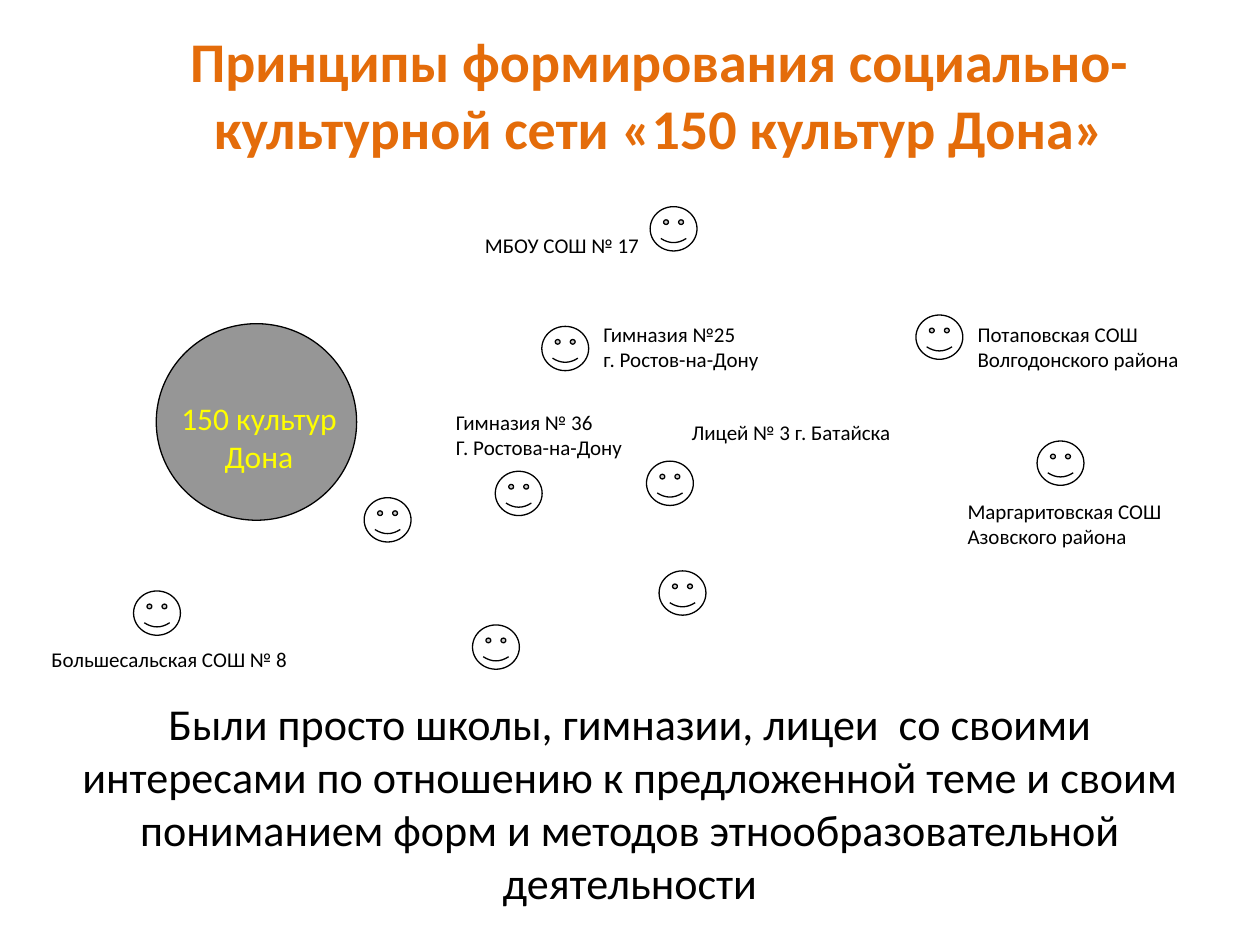
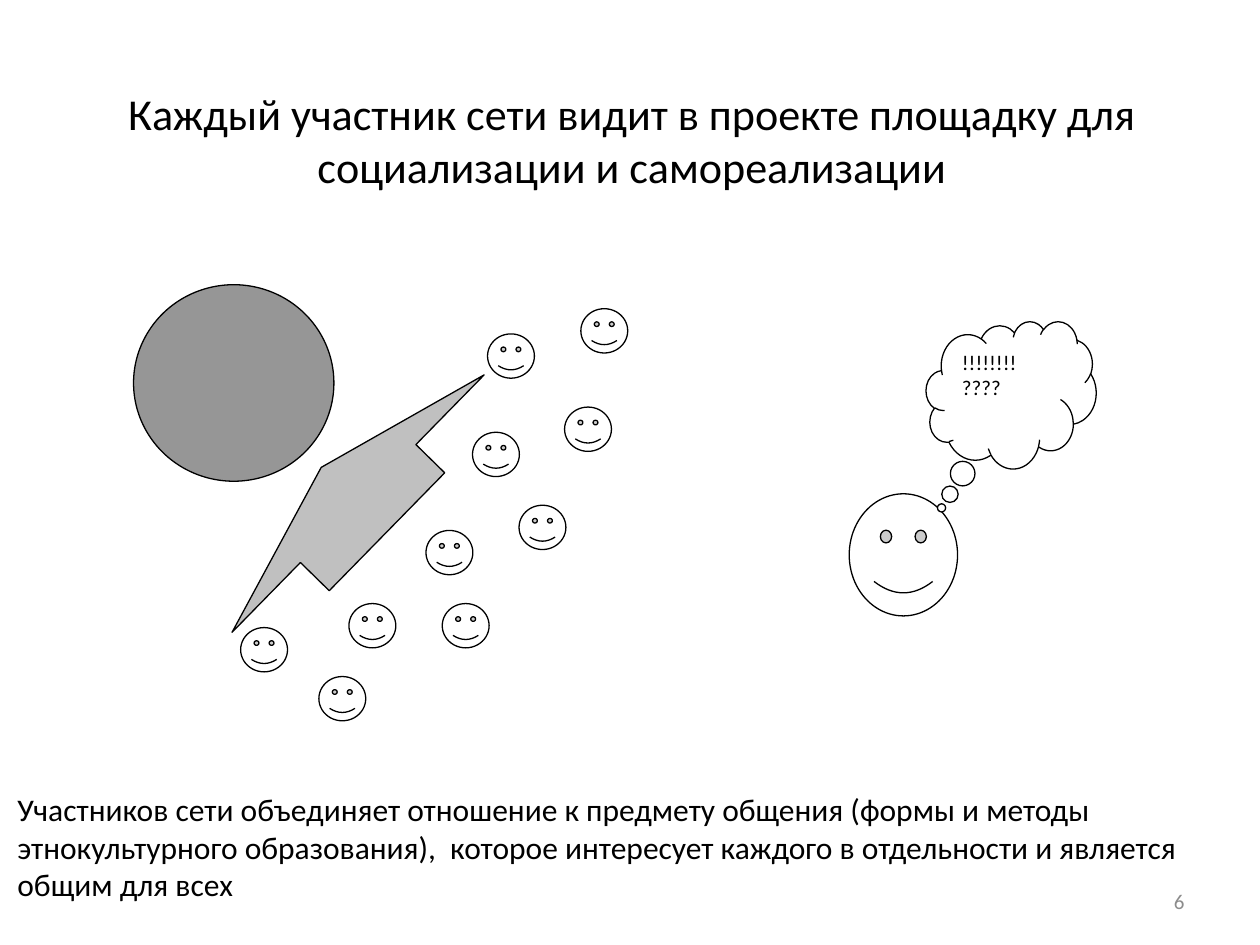
"""Build two slides about the «150 культур Дона» school network."""
from dataclasses import dataclass

from pptx import Presentation, util as u
from pptx.dml.color import RGBColor
from pptx.enum import shapes, text

Pt = u.Pt
Kind = shapes.MSO_SHAPE
Align = text.PP_ALIGN
Anchor = text.MSO_ANCHOR

FONT = "Calibri"
BLACK, WHITE, ORANGE, YELLOW = "000000", "FFFFFF", "E46C0A", "FFFF00"
HUB_GRAY, ARROW_GRAY, NUMBER_GRAY = "969696", "C0C0C0", "8C8C8C"
FACE_SIZE = (26.8, 25.3)
HUB_SIZE = (114.5, 112.3)
SMILE = (0.047,)
TITLE_SIZE = 25.2


@dataclass(frozen=True)
class Label:
    """Text box with its place in points and its style."""

    lines: tuple[str, ...]
    left: float
    top: float
    width: float
    height: float
    size: float = 12
    color: str = BLACK
    bold: bool = False
    align: Align = Align.LEFT
    anchor: Anchor = Anchor.TOP
    wrap: bool = False


@dataclass(frozen=True)
class Figure:
    """Outlined preset shape with its place in points."""

    kind: Kind
    left: float
    top: float
    width: float
    height: float
    fill: str = WHITE
    adjustments: tuple[float, ...] = ()
    rotation: float = 0
    lines: tuple[str, ...] = ()


def rgb(value: str) -> RGBColor:
    """Turn a hex string into a colour."""
    return RGBColor.from_string(value)


def write(frame, lines: tuple[str, ...], size: float, color: str,
          bold: bool = False, align: Align = Align.LEFT) -> None:
    """Fill a text frame with one paragraph for each line."""
    for index, line in enumerate(lines):
        paragraph = frame.add_paragraph() if index else frame.paragraphs[0]
        paragraph.alignment = align
        run = paragraph.add_run()
        run.text = line
        run.font.name = FONT
        run.font.size = Pt(size)
        run.font.bold = bold
        run.font.color.rgb = rgb(color)


def add_label(slide, label: Label) -> None:
    """Draw a text box."""
    shape = slide.shapes.add_textbox(
        Pt(label.left), Pt(label.top), Pt(label.width), Pt(label.height))
    frame = shape.text_frame
    frame.word_wrap = label.wrap
    frame.vertical_anchor = label.anchor
    write(frame, label.lines, label.size, label.color, label.bold, label.align)


def add_figure(slide, figure: Figure) -> None:
    """Draw a filled shape with a thin black outline."""
    shape = slide.shapes.add_shape(
        figure.kind, Pt(figure.left), Pt(figure.top),
        Pt(figure.width), Pt(figure.height))
    shape.shadow.inherit = False
    shape.fill.solid()
    shape.fill.fore_color.rgb = rgb(figure.fill)
    shape.line.color.rgb = rgb(BLACK)
    shape.line.width = Pt(0.75)
    shape.rotation = figure.rotation
    for index, value in enumerate(figure.adjustments):
        shape.adjustments[index] = value
    if figure.lines:
        shape.text_frame.vertical_anchor = Anchor.TOP
        write(shape.text_frame, figure.lines, 12, BLACK)


def face(left: float, top: float) -> Figure:
    """Describe the small face of one participant."""
    return Figure(Kind.SMILEY_FACE, left, top, *FACE_SIZE, adjustments=SMILE)


def hub(left: float, top: float) -> Figure:
    """Describe the gray circle of the project."""
    return Figure(Kind.OVAL, left, top, *HUB_SIZE, fill=HUB_GRAY)


def title(line: str, left: float, top: float, width: float, height: float) -> Label:
    """Describe a centred slide statement."""
    return Label((line,), left, top, width, height, TITLE_SIZE,
                 align=Align.CENTER, anchor=Anchor.MIDDLE, wrap=True)


SCHOOL_FACES = (
    (369.4, 263.5), (270, 357.1), (76.3, 337.7), (283, 269.3), (371.5, 118.1),
    (592.6, 252), (523.4, 180), (208.1, 284.4), (309.6, 186.5), (376.6, 326.2),
)
NETWORK_FACES = (
    (252.7, 344.9), (199.4, 344.9), (243.4, 303.1), (270, 247), (278.6, 190.8),
    (322.6, 232.6), (296.6, 288.7), (137.5, 358.6), (331.9, 176.4), (182.2, 386.6),
)

SCHOOL_FIGURES = (*(face(*place) for place in SCHOOL_FACES), hub(89.3, 185))
SCHOOL_LABELS = (
    title("Были просто школы, гимназии, лицеи  со своими интересами по отношению "
          "к предложенной теме и своим пониманием форм и методов "
          "этнообразовательной деятельности", 28.1, 399.6, 663.8, 118.1),
    Label(("Принципы формирования социально-культурной сети «150 культур Дона»",),
          33.8, 11.5, 686.2, 85, 32, ORANGE, True, Align.CENTER, wrap=True),
    Label(("150 культур", "Дона"), 95.8, 224.6, 104.4, 51.1, 18, YELLOW,
          align=Align.CENTER),
    Label(("МБОУ СОШ № 17",), 270, 129.6, 103.7, 21.6),
    Label(("Гимназия №25", "г. Ростов-на-Дону"), 337.7, 180, 104.4, 36),
    Label(("Большесальская СОШ № 8",), 22.3, 365.8, 151.2, 21.6),
    Label(("Потаповская СОШ", "Волгодонского района"), 551.5, 180, 131, 36),
    Label(("Маргаритовская СОШ", "Азовского района"), 545.8, 281.5, 129.6, 36),
    Label(("Гимназия № 36", "Г. Ростова-на-Дону"), 253.4, 230.4, 110.9, 36),
    Label(("Лицей № 3 г. Батайска",), 388.1, 236.2, 129.6, 21.6),
)

NETWORK_FIGURES = (
    *(face(*place) for place in NETWORK_FACES),
    hub(76.3, 162.7),
    Figure(Kind.DOWN_ARROW, 99.4, 259.2, 205.9, 52.6, ARROW_GRAY,
           (0.458, 0.561), 134.4),
    Figure(Kind.SMILEY_FACE, 485.3, 282.2, 61.9, 69.8, adjustments=SMILE),
    Figure(Kind.CLOUD_CALLOUT, 529.2, 183.6, 97.2, 84.2,
           adjustments=(-0.409, 0.767), lines=("!!!!!!!!", "????")),
)
NETWORK_LABELS = (
    title("Каждый участник сети видит в проекте площадку для социализации "
          "и самореализации", 36, 48.2, 650.2, 62.6),
    Label(("Участников сети объединяет отношение к предмету общения (формы и методы "
           "этнокультурного образования),  которое интересует каждого в отдельности "
           "и является общим для всех",), 2.9, 447.8, 717.1, 94.3, 18, wrap=True),
    Label(("6",), 516.2, 500.4, 167.8, 28.8, color=NUMBER_GRAY,
          align=Align.RIGHT, anchor=Anchor.MIDDLE, wrap=True),
)


def main() -> None:
    """Create the presentation and save it."""
    presentation = Presentation()
    presentation.slide_width, presentation.slide_height = Pt(720), Pt(540)
    for figures, labels in ((SCHOOL_FIGURES, SCHOOL_LABELS),
                            (NETWORK_FIGURES, NETWORK_LABELS)):
        slide = presentation.slides.add_slide(presentation.slide_layouts[6])
        for figure in figures:
            add_figure(slide, figure)
        for label in labels:
            add_label(slide, label)
    presentation.save("out.pptx")


if __name__ == "__main__":
    main()
